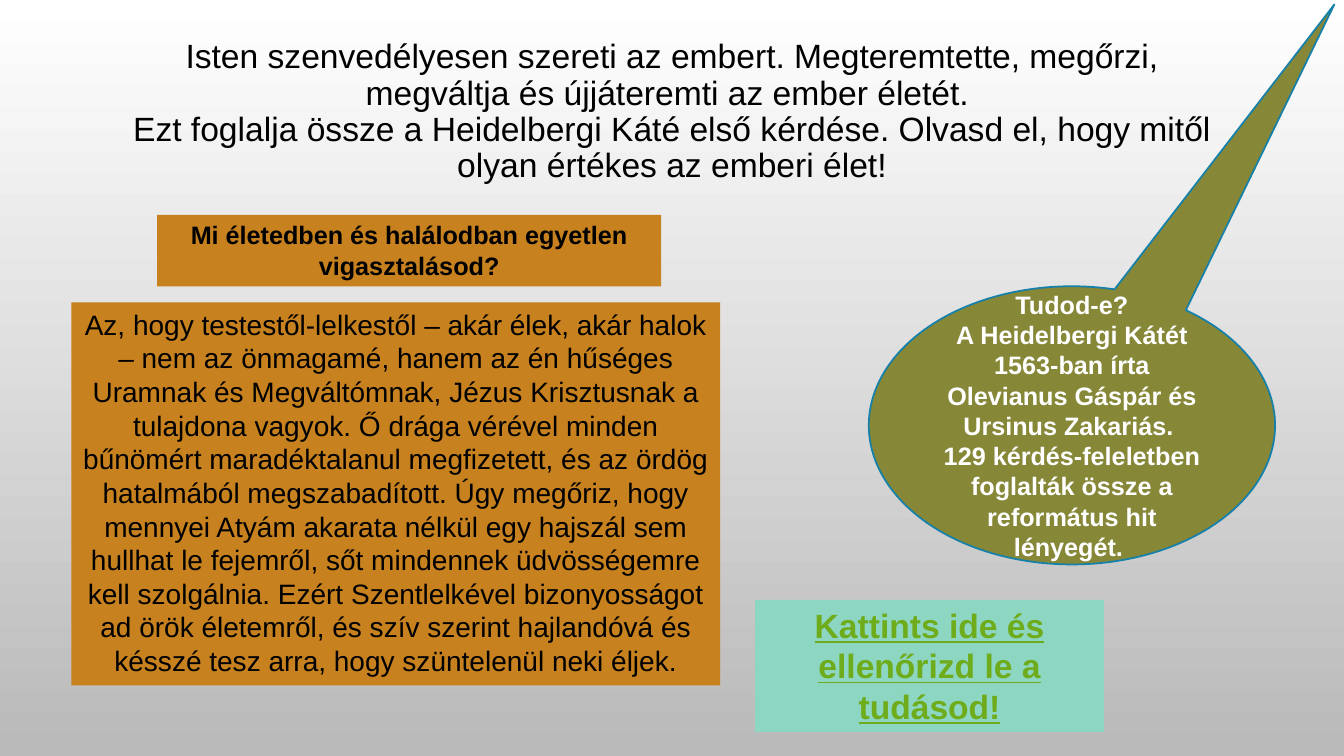
import pptx
import pptx.dml.color
import pptx.enum.shapes
import pptx.enum.text
import pptx.util

Pt = pptx.util.Pt
SHAPES = pptx.enum.shapes.MSO_SHAPE
ANCHOR = pptx.enum.text.MSO_ANCHOR
AUTO_SIZE = pptx.enum.text.MSO_AUTO_SIZE

# Content
TITLE = (
    "Isten szenvedélyesen szereti az embert. Megteremtette, megőrzi, "
    "megváltja és újjáteremti az ember életét. \v"
    "Ezt foglalja össze a Heidelbergi Káté első kérdése. Olvasd el, hogy mitől "
    "olyan értékes az emberi élet!"
)
QUESTION = "Mi életedben és halálodban egyetlen vigasztalásod?"
ANSWER = (
    "Az, hogy testestől-lelkestől – akár élek, akár halok – nem az önmagamé, "
    "hanem az én hűséges Uramnak és Megváltómnak, Jézus Krisztusnak a tulajdona "
    "vagyok. Ő drága vérével minden bűnömért maradéktalanul megfizetett, és az "
    "ördög hatalmából megszabadított. Úgy megőriz, hogy mennyei Atyám akarata "
    "nélkül egy hajszál sem hullhat le fejemről, sőt mindennek üdvösségemre kell "
    "szolgálnia. Ezért Szentlelkével bizonyosságot ad örök életemről, és szív "
    "szerint hajlandóvá és késszé tesz arra, hogy szüntelenül neki éljek."
)
QUIZ = "Kattints ide és ellenőrizd le a tudásod!"
FACTS = [
    "Tudod-e?",
    "A Heidelbergi Kátét 1563-ban írta Olevianus Gáspár és Ursinus Zakariás. ",
    "129 kérdés-feleletben foglalták össze a református hit lényegét. ",
]

THEME = {
    "font": "Arial",
    "black": "000000",
    "white": "FFFFFF",
    "grey": "B9B9B9",
    "ochre": "C7811E",
    "mint": "8DD6C1",
    "green": "6EAC1C",
    "olive": "868737",
    "blue": "1580A9",
    "large": 24,
    "body": 20,
    "small": 18,
}

# Left, top, width, height in points
TITLE_AREA = (72, 17.25, 816, 126)
ANSWER_AREA = (51, 216, 463.5, 273.6)
QUIZ_AREA = (539.5, 428.5, 249, 94.3)
FACTS_AREA = (620.6, 204.5, 290.2, 198.7)
QUESTION_AREA = (112.3, 153.4, 360, 51.1)


def color(name):
    return pptx.dml.color.RGBColor.from_string(THEME[name])


def write(frame, text, size, ink, bold=False, underline=False):
    frame.text = text
    frame.word_wrap = True
    for paragraph in frame.paragraphs:
        paragraph.alignment = pptx.enum.text.PP_ALIGN.CENTER
        for run in paragraph.runs:
            run.font.name = THEME["font"]
            run.font.size = Pt(THEME[size])
            run.font.color.rgb = color(ink)
            run.font.bold = bold
            run.font.underline = underline


def add_panel(slide, kind, area, fill, anchor=ANCHOR.TOP):
    panel = slide.shapes.add_shape(kind, *map(Pt, area))
    panel.shadow.inherit = False
    panel.fill.solid()
    panel.fill.fore_color.rgb = color(fill)
    panel.line.fill.background()
    panel.text_frame.vertical_anchor = anchor
    return panel


def main():
    deck = pptx.Presentation()
    deck.slide_width, deck.slide_height = Pt(960), Pt(540)
    slide = deck.slides.add_slide(deck.slide_layouts[5])

    # Background, fading from top to bottom
    backdrop = slide.background.fill
    backdrop.gradient()
    backdrop.gradient_angle = 270
    for stop, name in zip(backdrop.gradient_stops, ("white", "grey")):
        stop.color.rgb = color(name)

    # Title
    title = slide.shapes.title
    title.left, title.top, title.width, title.height = map(Pt, TITLE_AREA)
    write(title.text_frame, TITLE, "large", "black")
    title.text_frame.auto_size = AUTO_SIZE.NONE
    title.text_frame.vertical_anchor = ANCHOR.MIDDLE
    title.text_frame.paragraphs[0].line_spacing = 0.9

    # Answer and quiz panels
    answer = add_panel(slide, SHAPES.RECTANGLE, ANSWER_AREA, "ochre")
    write(answer.text_frame, ANSWER, "body", "black")
    quiz = add_panel(slide, SHAPES.RECTANGLE, QUIZ_AREA, "mint")
    write(quiz.text_frame, QUIZ, "large", "green", bold=True, underline=True)

    # Facts in a callout pointing to the top right corner
    facts = add_panel(slide, SHAPES.OVAL_CALLOUT, FACTS_AREA, "olive", ANCHOR.MIDDLE)
    facts.adjustments[0], facts.adjustments[1] = 0.646, -1.513
    facts.line.color.rgb = color("blue")
    facts.line.width = Pt(1.25)
    write(facts.text_frame, "\n".join(FACTS), "small", "white", bold=True)

    # Question above the answer
    question = add_panel(slide, SHAPES.RECTANGLE, QUESTION_AREA, "ochre")
    write(question.text_frame, QUESTION, "small", "black", bold=True)

    for panel in (answer, quiz, question):
        panel.text_frame.auto_size = AUTO_SIZE.SHAPE_TO_FIT_TEXT

    deck.save("out.pptx")


if __name__ == "__main__":
    main()
